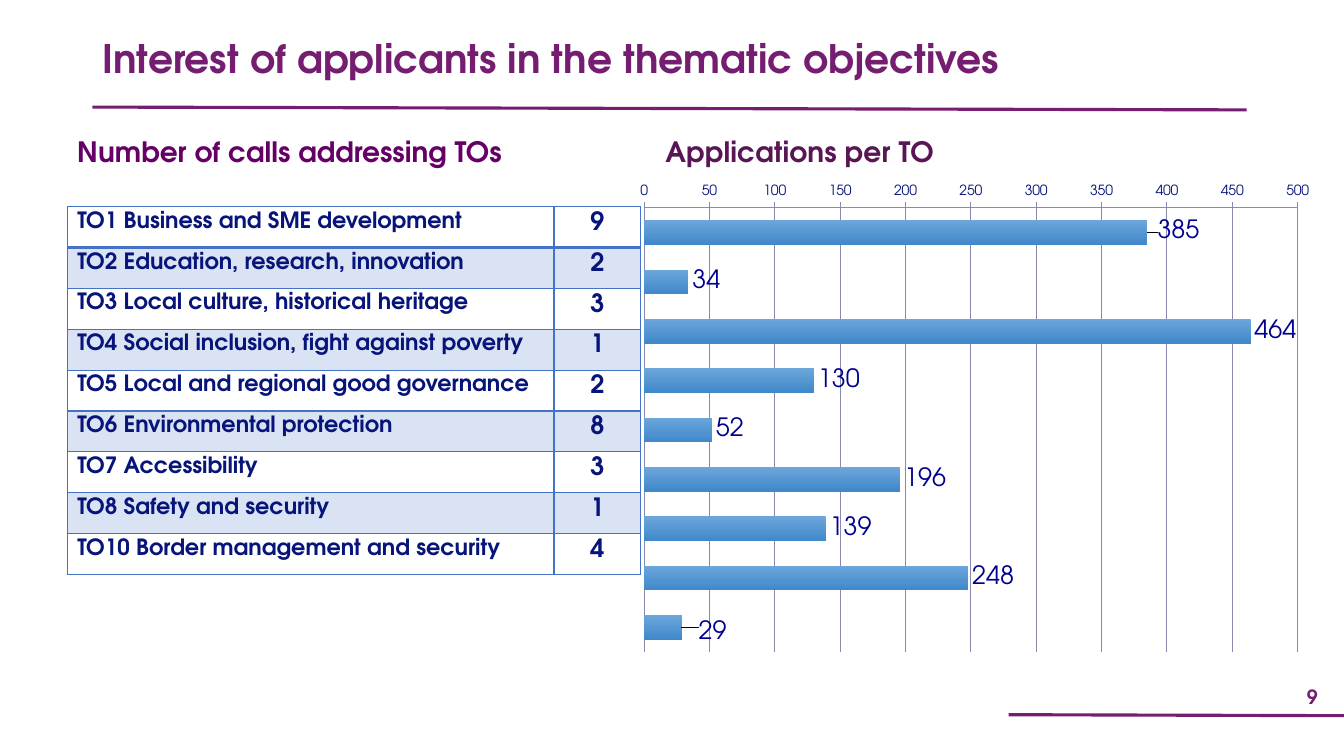
from lxml import etree
from pptx import Presentation
from pptx.chart.data import CategoryChartData
from pptx.dml.color import RGBColor
from pptx.enum.chart import XL_CHART_TYPE as ChartType
from pptx.enum.chart import XL_LABEL_POSITION as LabelPos
from pptx.enum.chart import XL_TICK_MARK as Tick
from pptx.enum.shapes import MSO_CONNECTOR as Connector
from pptx.enum.text import MSO_ANCHOR as Anchor
from pptx.enum.text import PP_ALIGN as Align
from pptx.oxml import parse_xml
from pptx.oxml.ns import nsdecls, qn
from pptx.util import Pt

PURPLE = RGBColor(0x75, 0x1D, 0x70)
HEADING = RGBColor(0x66, 0x00, 0x66)
CHART_TITLE = RGBColor(0x58, 0x16, 0x54)
NAVY = RGBColor(0x07, 0x14, 0x7A)
LABEL = RGBColor(0x00, 0x00, 0x90)
BORDER = RGBColor(0x44, 0x72, 0xC4)
BAND = RGBColor(0xDA, 0xE3, 0xF3)
GRID = RGBColor(0x8A, 0x8A, 0xAE)
BAR_TOP = RGBColor(0x6C, 0xA6, 0xDB)
BAR_BOTTOM = RGBColor(0x40, 0x88, 0xCA)
FONT = "TeX Gyre Adventor"

# Objective, its theme, number of calls, number of applications
OBJECTIVES = [
    ("TO1", "Business and SME development", 9, 385),
    ("TO2", "Education, research, innovation", 2, 34),
    ("TO3", "Local culture, historical heritage", 3, 464),
    ("TO4", "Social inclusion, fight against poverty", 1, 130),
    ("TO5", "Local and regional good governance", 2, 52),
    ("TO6", "Environmental protection", 8, 196),
    ("TO7", "Accessibility", 3, 139),
    ("TO8", "Safety and security", 1, 248),
    ("TO10", "Border management and security", 4, 29),
]


def set_font(font, size, color, bold=True):
    font.name, font.size, font.bold = FONT, Pt(size), bold
    font.color.rgb = color


def add_text(s, text, box, size, color, anchor=Anchor.TOP, align=Align.LEFT):
    tf = s.shapes.add_textbox(*map(Pt, box)).text_frame
    tf.word_wrap = True
    tf.vertical_anchor = anchor
    p = tf.paragraphs[0]
    p.text, p.alignment, p.line_spacing = text, align, 0.9
    set_font(p.font, size, color)


def add_rule(s, x1, y1, x2, y2):
    line = s.shapes.add_connector(Connector.STRAIGHT, *map(Pt, (x1, y1, x2, y2)))
    line.line.color.rgb = PURPLE
    line.line.width = Pt(2.25)
    etree.SubElement(line._element.spPr, qn("a:effectLst"))


def add_header(s, x, y, w, h):
    add_text(s, "Interest of applicants in the thematic objectives",
             (x, y, w - 124, h), 28, PURPLE)
    add_rule(s, x, y + h + 5, x + w, y + h + 7)


def add_footer(s, x, y, w, h):
    add_text(s, "9", (x + w - 45, y + 1.2, 45, h), 14, PURPLE, Anchor.MIDDLE, Align.CENTER)
    add_rule(s, x, y + h, x + w, y + h + 0.7)


def set_borders(cell, bottom):
    """Draw the four cell edges; they precede the fill in the XML."""
    tcPr = cell._tc.get_or_add_tcPr()
    for i, (side, width) in enumerate((("L", 1), ("R", 1), ("T", 1), ("B", bottom))):
        tcPr.insert(i, parse_xml(
            f'<a:ln{side} {nsdecls("a")} w="{Pt(width)}"><a:solidFill>'
            f'<a:srgbClr val="{BORDER}"/></a:solidFill></a:ln{side}>'))


def add_calls(s, x, y, w, h):
    heading_h, count_w = 40, 62
    add_text(s, "Number of calls addressing TOs", (x, y - 0.8, w, heading_h),
             20, HEADING, Anchor.BOTTOM)

    # Table under the heading
    top = y + heading_h + 22.6
    table = s.shapes.add_table(len(OBJECTIVES), 2, Pt(x), Pt(top), Pt(w),
                               Pt(y + h - top)).table
    table.first_row = table.horz_banding = False
    table.columns[0].width, table.columns[1].width = Pt(w - count_w), Pt(count_w)
    for i, (code, theme, calls, _) in enumerate(OBJECTIVES):
        columns = ((f"{code} {theme}", 16, Align.LEFT), (str(calls), 18, Align.CENTER))
        for j, (text, size, align) in enumerate(columns):
            cell = table.cell(i, j)
            if i % 2:
                cell.fill.solid()
                cell.fill.fore_color.rgb = BAND
            else:
                cell.fill.background()
            set_borders(cell, 2 if i == 0 else 1)
            p = cell.text_frame.paragraphs[0]
            p.text, p.alignment = text, align
            set_font(p.font, size, NAVY)


def set_layout(parent, index, inner=False, **values):
    """Place a chart part by fractions of the chart size."""
    for old in parent.findall(qn("c:layout")):
        parent.remove(old)
    layout = parse_xml(f'<c:layout {nsdecls("c")}><c:manualLayout/></c:layout>')
    if inner:
        etree.SubElement(layout[0], qn("c:layoutTarget"), val="inner")
    for key, value in values.items():
        etree.SubElement(layout[0], qn(f"c:{key}"), val=str(value))
    parent.insert(index, layout)


def hide_leader_lines(labels):
    labels._element.append(parse_xml(
        f'<c:extLst {nsdecls("c")}><c:ext uri="{{CE6537A1-D6FC-4f65-9D91-7224C49458BB}}" '
        'xmlns:c15="http://schemas.microsoft.com/office/drawing/2012/chart">'
        '<c15:showLeaderLines val="0"/></c:ext></c:extLst>'))


def add_applications(s, x, y, w, h):
    data = CategoryChartData()
    data.categories = [row[0] for row in OBJECTIVES]
    data.add_series("Series 1", [row[3] for row in OBJECTIVES])
    chart = s.shapes.add_chart(ChartType.BAR_CLUSTERED, *map(Pt, (x, y, w, h)), data).chart
    chart.has_legend = False
    set_font(chart.font, 10, NAVY, False)

    # Title and plot placement
    p = chart.chart_title.text_frame.paragraphs[0]
    p.text = "Applications per TO"
    set_font(p.font, 20, CHART_TITLE)
    set_layout(chart.chart_title._element, 1, xMode="edge", yMode="edge",
               x=0.053, y=0.025)
    set_layout(chart._chartSpace.chart.plotArea, 0, True, xMode="edge", yMode="edge",
               x=0.03, y=0.158, w=0.93, h=0.79)

    # Axes
    chart.category_axis.visible = False
    chart.category_axis.reverse_order = True
    axis = chart.value_axis
    axis.minimum_scale, axis.maximum_scale, axis.major_unit = 0, 500, 50
    axis.major_tick_mark = Tick.CROSS
    axis.has_major_gridlines = True
    for line in (axis.format.line, axis.major_gridlines.format.line):
        line.color.rgb = GRID
        line.width = Pt(0.75)

    # Bars
    plot = chart.plots[0]
    plot.gap_width, plot.vary_by_categories = 100, False
    series = plot.series[0]
    fill = series.format.fill
    fill.gradient()
    fill.gradient_angle = 270
    for stop, color in zip(fill.gradient_stops, (BAR_TOP, BAR_BOTTOM)):
        stop.color.rgb = color

    # Value labels, the first and last nudged off their bars
    labels = series.data_labels
    labels.show_value = True
    labels.position = LabelPos.OUTSIDE_END
    set_font(labels.font, 18, LABEL, False)
    nudges = ((0, 0.009, -0.002), (len(OBJECTIVES) - 1, 0.018, 0.009))
    for n, (i, dx, dy) in enumerate(nudges, 1):
        label = series.points[i].data_label
        set_font(label.font, 18, LABEL, False)
        label.position = LabelPos.OUTSIDE_END
        set_layout(labels._element.find(f"{qn('c:dLbl')}[{n}]"), 1, x=dx, y=dy)
    hide_leader_lines(labels)


def main():
    prs = Presentation()
    prs.slide_width, prs.slide_height = Pt(960), Pt(540)
    s = prs.slides.add_slide(prs.slide_layouts[6])
    add_header(s, 66, 24.5, 824.5, 47)
    add_calls(s, 48, 85, 409.7, 325.5)
    add_applications(s, 445, 85, 502, 401.8)
    add_footer(s, 720.5, 484.5, 239.5, 26)
    prs.save("out.pptx")


if __name__ == "__main__":
    main()
